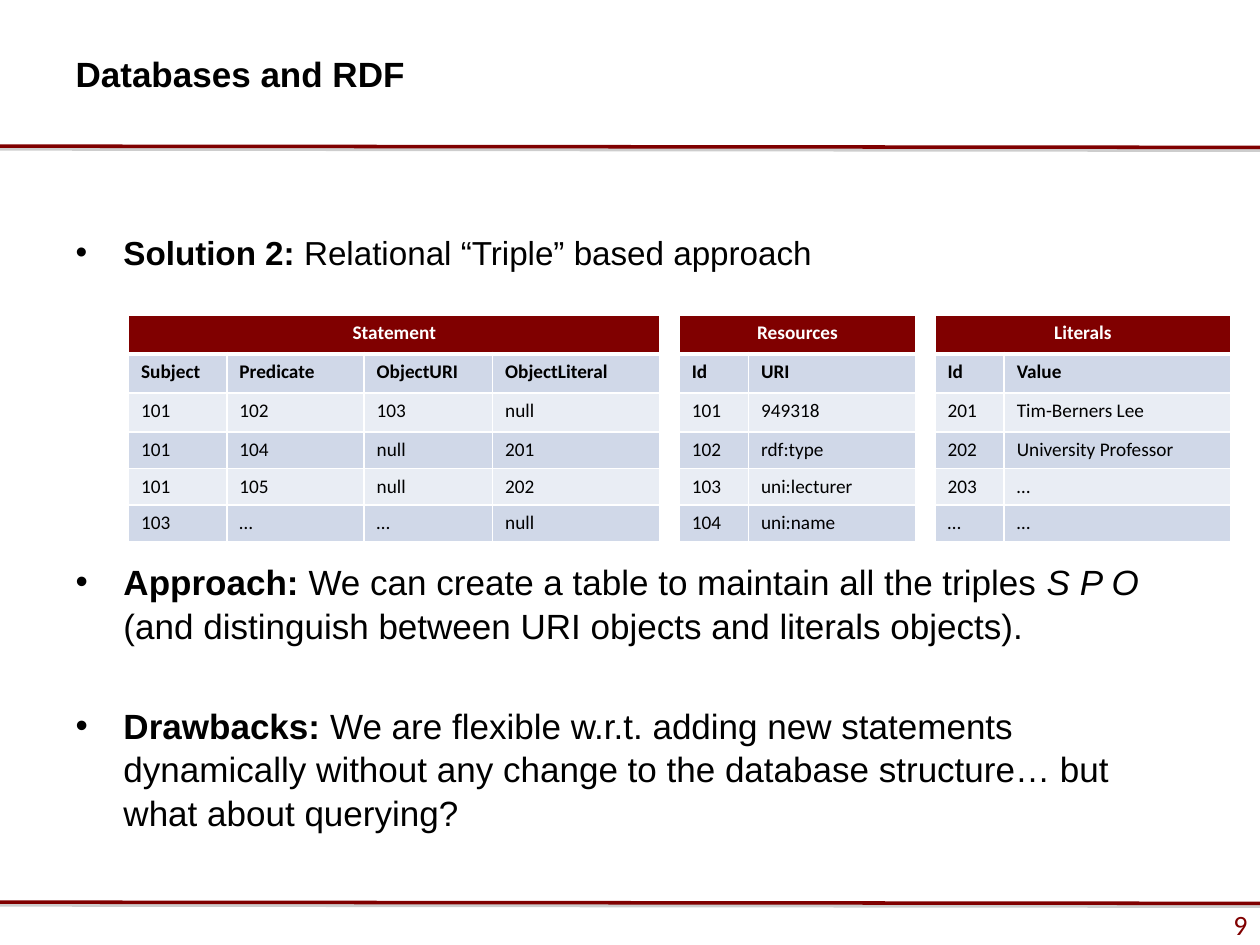
from lxml import etree
from pptx import Presentation
from pptx.dml.color import RGBColor
from pptx.enum import shapes, text
from pptx.oxml import parse_xml
from pptx.oxml.ns import nsdecls, qn
from pptx.util import Inches, Pt

MAROON = RGBColor(0x80, 0x00, 0x00)
WHITE = RGBColor(0xFF, 0xFF, 0xFF)
BLACK = RGBColor(0x00, 0x00, 0x00)
BAND_DARK = RGBColor(0xD0, 0xD8, 0xE8)
BAND_LIGHT = RGBColor(0xE9, 0xED, 0xF4)


def add_run(p, words, size, color=BLACK, font="Arial", bold=False, italic=False):
    r = p.add_run()
    r.text = words
    r.font.name = font
    r.font.size = Pt(size)
    r.font.bold = bold
    r.font.italic = italic
    r.font.color.rgb = color


def set_borders(cell, top, bottom):
    tcPr = cell._tc.get_or_add_tcPr()
    widths = {"lnL": 1, "lnR": 1, "lnT": top, "lnB": bottom}
    for i, (side, width) in enumerate(widths.items()):
        tcPr.insert(i, parse_xml(
            f'<a:{side} {nsdecls("a")} w="{Pt(width)}"><a:solidFill>'
            f'<a:srgbClr val="{WHITE}"/></a:solidFill></a:{side}>'))


prs = Presentation()
prs.slide_width, prs.slide_height = Inches(10), Inches(7.5)
s = prs.slides.add_slide(prs.slide_layouts[1])
title, body = s.placeholders

# Slide number strip
sp = s.shapes.add_shape(shapes.MSO_SHAPE.RECTANGLE, 0, Inches(7.21), Inches(10), Inches(0.25))
sp.shadow.inherit = False
sp.fill.solid()
sp.fill.fore_color.rgb = WHITE
sp.line.fill.background()
tf = sp.text_frame
tf.word_wrap = False
tf.vertical_anchor = text.MSO_ANCHOR.MIDDLE
p = tf.paragraphs[0]
p.alignment = text.PP_ALIGN.RIGHT
add_run(p, "9", 16, MAROON, "Calibri")

# Header and footer rules with a soft grey shadow
for y in (1.16, 7.16):
    rule = s.shapes.add_connector(shapes.MSO_CONNECTOR.STRAIGHT, 0, Inches(y),
                                  Inches(10), Inches(y + 0.01))
    rule.line.color.rgb = MAROON
    rule.line.width = Pt(2)
    rule._element.spPr.append(parse_xml(
        f'<a:effectLst {nsdecls("a")}><a:outerShdw blurRad="0" dist="{Pt(1.6)}" dir="5400000">'
        '<a:srgbClr val="808080"><a:alpha val="38000"/></a:srgbClr>'
        '</a:outerShdw></a:effectLst>'))

# Title
title.left, title.top, title.width, title.height = map(Inches, (0.5, 0.33, 6.33, 0.5))
tf = title.text_frame
tf.auto_size = text.MSO_AUTO_SIZE.NONE
tf.vertical_anchor = text.MSO_ANCHOR.MIDDLE
p = tf.paragraphs[0]
p.alignment = text.PP_ALIGN.LEFT
add_run(p, "Databases and RDF", 20, bold=True)

# Bulleted list: space before, size, runs as (words, bold, italic)
bullets = [
    (0, 19, [("Solution 2: ", True, False),
             ("Relational “Triple” based approach", False, False)]),
    (164, 20, [("Approach:", True, False),
               (" We can create a table to maintain all the triples ", False, False),
               ("S P O ", False, True),
               ("(and distinguish between URI objects and literals objects).", False, False)]),
    (32, 20, [("Drawbacks:", True, False),
              (" We are flexible w.r.t. adding new statements dynamically without any "
               "change to the database structure… but what about querying?", False, False)]),
]
body.left, body.top, body.width, body.height = map(Inches, (0.5, 1.75, 9, 4.95))
tf = body.text_frame
tf.auto_size = text.MSO_AUTO_SIZE.NONE
tf.margin_top = Inches(0.08)
for i, (gap, size, runs) in enumerate(bullets):
    p = tf.add_paragraph() if i else tf.paragraphs[0]
    pPr = p._p.get_or_add_pPr()
    pPr.set("marL", str(Inches(0.38)))
    pPr.set("indent", str(-Inches(0.38)))
    etree.SubElement(pPr, qn("a:buChar"), char="•")
    p.space_before = Pt(gap)
    p.line_spacing = 1.04
    for words, bold, italic in runs:
        add_run(p, words, size, bold=bold, italic=italic)

# Tables: name, left edge, column widths, rows
tables = [
    ("Statement", 1.02, (0.78, 1.09, 1.02, 1.33), [
        ("Subject", "Predicate", "ObjectURI", "ObjectLiteral"),
        ("101", "102", "103", "null"),
        ("101", "104", "null", "201"),
        ("101", "105", "null", "202"),
        ("103", "…", "…", "null")]),
    ("Resources", 5.39, (0.55, 1.33), [
        ("Id", "URI"), ("101", "949318"), ("102", "rdf:type"),
        ("103", "uni:lecturer"), ("104", "uni:name")]),
    ("Literals", 7.42, (0.55, 1.8), [
        ("Id", "Value"), ("201", "Tim-Berners Lee"), ("202", "University Professor"),
        ("203", "…"), ("…", "…")]),
]
row_heights = (0.31, 0.31, 0.31, 0.29, 0.29, 0.29)
for name, left, widths, rows in tables:
    table = s.shapes.add_table(len(row_heights), len(widths), Inches(left), Inches(2.5),
                               Inches(sum(widths)), Inches(sum(row_heights))).table
    for column, width in zip(table.columns, widths):
        column.width = Inches(width)
    for row, height in zip(table.rows, row_heights):
        row.height = Inches(height)
    table.cell(0, 0).merge(table.cell(0, len(widths) - 1))
    header = (name,) + ("",) * (len(widths) - 1)
    for i, values in enumerate([header] + rows):
        for j, value in enumerate(values):
            cell = table.cell(i, j)
            cell.fill.solid()
            cell.fill.fore_color.rgb = MAROON if i == 0 else BAND_DARK if i % 2 else BAND_LIGHT
            set_borders(cell, 3 if i == 1 else 1, 3 if i == 0 else 1)
            if value:
                p = cell.text_frame.paragraphs[0]
                p.alignment = text.PP_ALIGN.LEFT if i else text.PP_ALIGN.CENTER
                add_run(p, value, 11, BLACK if i else WHITE, "Calibri", bold=i < 2)

prs.save("out.pptx")
